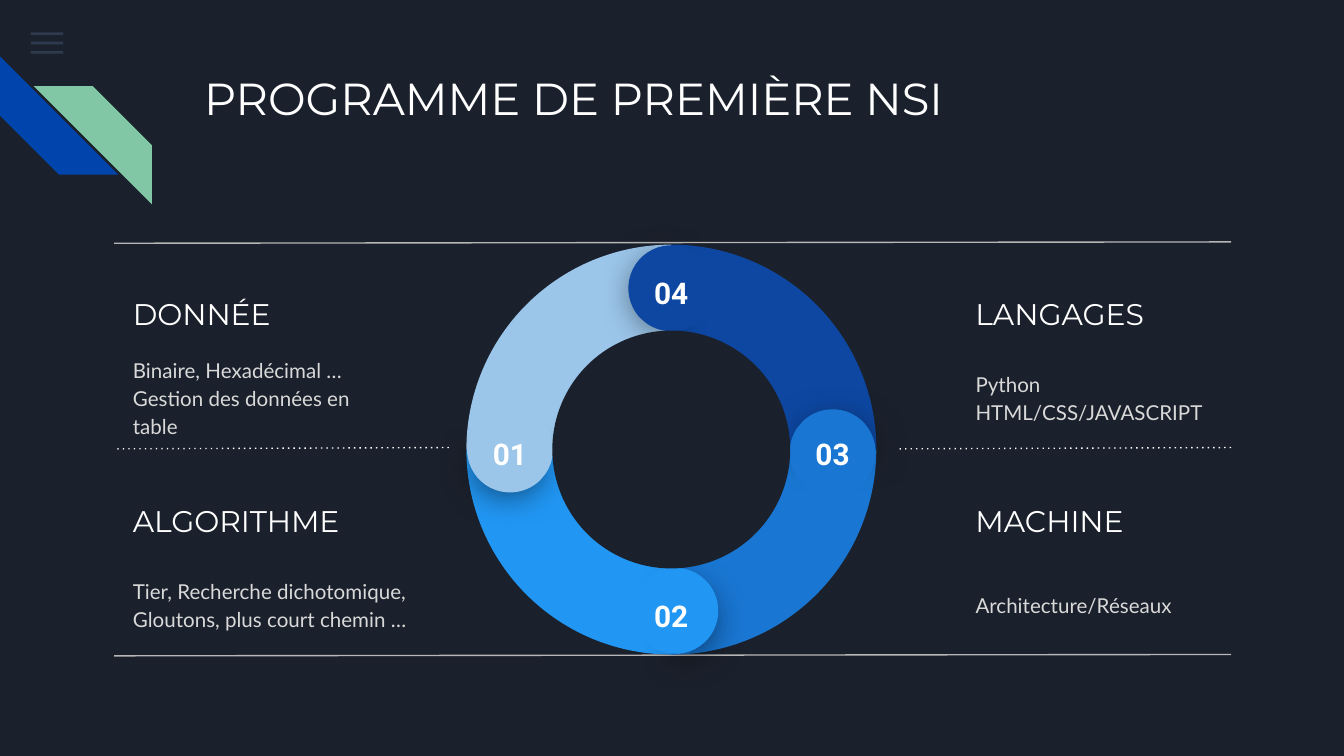
import math
from dataclasses import dataclass

import lxml.etree
import pptx
import pptx.dml.color
import pptx.enum.dml
import pptx.enum.shapes
import pptx.enum.text
import pptx.oxml.ns
import pptx.util

Inches = pptx.util.Inches
Shape = pptx.enum.shapes.MSO_SHAPE
Anchor = pptx.enum.text.MSO_ANCHOR
Align = pptx.enum.text.PP_ALIGN
qn = pptx.oxml.ns.qn


@dataclass(frozen=True)
class Theme:
    background: str = "1B212C"
    menu: str = "55688B"
    stripe_blue: str = "0145AC"
    stripe_green: str = "82C7A5"
    white: str = "FFFFFF"
    body: str = "D9D9D9"
    rule: str = "B7B7B7"
    title_size: int = 24
    heading_size: int = 16
    body_size: int = 11
    heading_font: str = "Montserrat"
    body_font: str = "Lato"
    number_font: str = "Roboto"


THEME = Theme()

PAGE_WIDTH = 10
PAGE_HEIGHT = PAGE_WIDTH * 9 / 16
RING_SIZE, HOLE_SIZE = 3.05, 1.77
CENTER_X, CENTER_Y = 3.47 + RING_SIZE / 2, 1.82 + RING_SIZE / 2
CAP_ORBIT, CAP_SIZE = 1.2, 0.64
SHADOW_ORBIT, SHADOW_SIZE = 1.22, 0.57
HALF_PIE, WIDE_HALF_PIE = (189.54, 83.81), (196.87, 77.71)

# number, colour, clockwise turn from the upper left quarter,
# shift of the cap to the right and down, angles of its shaded half
SEGMENTS = [
    ("01", "9BC5E9", 0, 0, 0, HALF_PIE),
    ("02", "2196F3", 270, 0.03, 0, HALF_PIE),
    ("03", "1976D2", 180, 0, 0.02, WIDE_HALF_PIE),
    ("04", "0D47A1", 90, 0, 0, HALF_PIE),
]

# left, top, body width, heading, body ("\v" is a line break in a paragraph)
TOPICS = [
    (0.89, 2.09, 2.18, "DONNÉE", "Binaire, Hexadécimal …\nGestion des données en table"),
    (0.89, 3.63, 2.58, "ALGORITHME", "Tier, Recherche dichotomique, Gloutons, plus court chemin …"),
    (7.16, 2.09, 2.18, "LANGAGES", "Python\vHTML/CSS/JAVASCRIPT"),
    (7.16, 3.63, 2.18, "MACHINE", "Architecture/Réseaux"),
]


def rgb(color):
    return pptx.dml.color.RGBColor.from_string(color)


def add_filled(page, kind, left, top, width, height, color, rotation=0, adjustments=()):
    shape = page.shapes.add_shape(kind, Inches(left), Inches(top), Inches(width), Inches(height))
    shape.shadow.inherit = False
    shape.fill.solid()
    shape.fill.fore_color.rgb = rgb(color)
    shape.line.fill.background()
    shape.rotation = rotation
    for index, value in enumerate(adjustments):
        shape.adjustments[index] = value
    return shape


def add_centered(page, kind, x, y, size, color, rotation=0, adjustments=()):
    """Add a square-framed shape around the point x, y."""
    return add_filled(page, kind, x - size / 2, y - size / 2, size, size, color, rotation, adjustments)


def add_text(page, left, top, width, height, text, font, size, color,
             anchor=Anchor.TOP, align=Align.LEFT, bold=False, spacing=None):
    box = page.shapes.add_textbox(Inches(left), Inches(top), Inches(width), Inches(height))
    frame = box.text_frame
    frame.word_wrap = True
    frame.vertical_anchor = anchor
    frame.margin_left = frame.margin_right = Inches(0.1)
    frame.margin_top = frame.margin_bottom = Inches(0.1)
    frame.text = text
    for para in frame.paragraphs:
        para.alignment = align
        para.line_spacing = spacing
        for span in para.runs:
            span.font.name = font
            span.font.size = pptx.util.Pt(size)
            span.font.bold = bold
            span.font.color.rgb = rgb(color)


def add_rule(page, start, end, y, color, dotted=False):
    """Draw a thin, very slightly slanted line from right to left."""
    line = page.shapes.add_connector(
        pptx.enum.shapes.MSO_CONNECTOR.STRAIGHT,
        Inches(start), Inches(y), Inches(end), Inches(y + 0.01))
    line.line.color.rgb = rgb(color)
    line.line.width = pptx.util.Pt(0.75)
    if dotted:
        line.line.dash_style = pptx.enum.dml.MSO_LINE.ROUND_DOT
        next(line._element.iter(qn("a:prstDash"))).set("val", "dot")
    lxml.etree.SubElement(line._element.spPr, qn("a:effectLst"))


def set_alpha(color_element, percent):
    lxml.etree.SubElement(color_element, qn("a:alpha"), val=str(percent * 1000))


def add_soft_shadow(shape):
    effects = shape._element.spPr.find(qn("a:effectLst"))
    shadow = lxml.etree.SubElement(
        effects, qn("a:outerShdw"), blurRad=str(pptx.util.Pt(18)),
        dist=str(pptx.util.Pt(4)), dir="5400000", algn="bl", rotWithShape="0")
    set_alpha(lxml.etree.SubElement(shadow, qn("a:srgbClr"), val="000000"), 55)


def add_decoration(page):
    for row in range(3):
        bar = add_filled(page, Shape.RECTANGLE, 0.23, 0.24 + 0.07 * row, 0.24, 0.02, THEME.menu)
        set_alpha(next(bar._element.spPr.iter(qn("a:srgbClr"))), 36)
    add_filled(page, Shape.DIAGONAL_STRIPE, 0, 0.42, 0.88, 0.88, THEME.stripe_blue, 270, [0.5])
    green = add_filled(page, Shape.DIAGONAL_STRIPE, 0.25, 0.64, 0.88, 0.88,
                       THEME.stripe_green, 0, [0.5])
    green._element.spPr.find(qn("a:xfrm")).set("flipH", "1")


def add_topic(page, left, top, body_width, heading, body):
    add_text(page, left, top, 2.03, 0.49, heading, THEME.heading_font,
             THEME.heading_size, THEME.white, Anchor.MIDDLE)
    add_text(page, left, top + 0.48, body_width, 0.76, body, THEME.body_font,
             THEME.body_size, THEME.body, Anchor.MIDDLE, spacing=1.15)


def orbit(radius, turn):
    """Point on a circle round the ring's centre, starting at its left."""
    angle = math.radians(180 + turn)
    return CENTER_X + radius * math.cos(angle), CENTER_Y + radius * math.sin(angle)


def add_cap(page, number, color, turn, right, down, half_angles):
    """Add the rounded, numbered end of a ring segment."""
    x, y = orbit(SHADOW_ORBIT, turn)
    half = add_centered(page, Shape.PIE, x + right, y + down, SHADOW_SIZE, color,
                        39.5 + turn, half_angles)
    add_soft_shadow(half)
    x, y = orbit(CAP_ORBIT, turn)
    add_centered(page, Shape.CHORD, x + right, y + down, CAP_SIZE, color,
                 4.1 + turn, [25.01, 18.12])
    add_text(page, x - 0.28, y - 0.2, 0.56, 0.29, number, THEME.number_font,
             THEME.heading_size, THEME.white, align=Align.CENTER, bold=True)


def add_ring(page):
    for _, color, turn, *_ in SEGMENTS:
        add_centered(page, Shape.PIE, CENTER_X, CENTER_Y, RING_SIZE, color, turn, [108, 162])
    for segment in SEGMENTS:
        add_cap(page, *segment)
    add_centered(page, Shape.OVAL, CENTER_X, CENTER_Y, HOLE_SIZE, THEME.background)


def main():
    deck = pptx.Presentation()
    deck.slide_width, deck.slide_height = Inches(PAGE_WIDTH), Inches(PAGE_HEIGHT)
    page = deck.slides.add_slide(deck.slide_layouts[6])
    page.background.fill.solid()
    page.background.fill.fore_color.rgb = rgb(THEME.background)

    add_decoration(page)
    add_text(page, 1.42, 0.43, 7.7, 1, "PROGRAMME DE PREMIÈRE NSI",
             THEME.heading_font, THEME.title_size, THEME.white)
    for topic in TOPICS:
        add_topic(page, *topic)
    for y in (1.8, 4.87):
        add_rule(page, 9.16, 0.85, y, THEME.rule)
    for start in (3.34, 9.16):
        add_rule(page, start, start - 2.49, 3.33, THEME.white, dotted=True)
    add_ring(page)
    deck.save("out.pptx")


if __name__ == "__main__":
    main()
